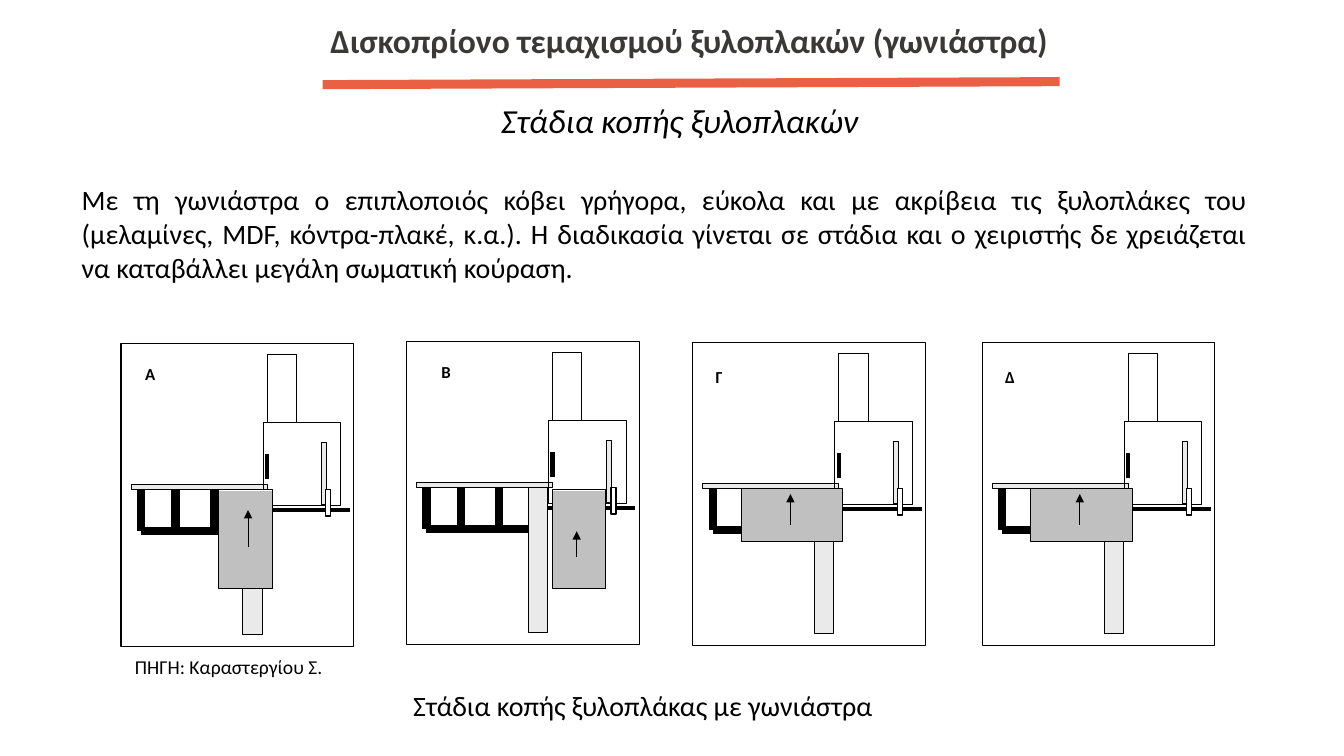
import pptx
import pptx.util
import pptx.dml.color
import pptx.enum.dml
import pptx.enum.shapes
import pptx.enum.text
import pptx.oxml
import pptx.oxml.ns
import lxml.etree

ALIGN = pptx.enum.text.PP_ALIGN
ANCHOR = pptx.enum.text.MSO_ANCHOR
PATTERN = pptx.enum.dml.MSO_PATTERN
BLACK, WHITE, PALE, GREY = "000000", "FFFFFF", "EAEAEA", "C0C0C0"


def px(n):
    """One px is a hundredth of an inch."""
    return pptx.util.Emu(n * 9144)


def color(code):
    return pptx.dml.color.RGBColor.from_string(code)


def add_xml(parent, tag):
    return lxml.etree.SubElement(parent, pptx.oxml.ns.qn(tag))


class Deck:
    font = "Calibri"

    def __init__(self):
        self.prs = pptx.Presentation()
        self.prs.slide_width, self.prs.slide_height = px(1333), px(750)
        self.s = self.prs.slides.add_slide(self.prs.slide_layouts[1])
        self.target = self.s.shapes
        self.x = self.y = 0

    def start_group(self, x, y):
        """Elements that follow go in a group, measured from x, y."""
        self.target = self.s.shapes.add_group_shape().shapes
        self.x, self.y = x, y

    def end_group(self):
        self.target = self.s.shapes
        self.x = self.y = 0

    def place(self, sp, box):
        x, y, w, h = box
        sp.left, sp.top = px(self.x + x), px(self.y + y)
        sp.width, sp.height = px(w), px(h)

    def fill_text(self, sp, text, size, code=BLACK, bold=False, italic=False,
                  align=ALIGN.LEFT, anchor=ANCHOR.TOP, wrap=True, indent=0,
                  grow=True):
        tf = sp.text_frame
        tf.word_wrap = wrap
        tf.vertical_anchor = anchor
        sizes = pptx.enum.text.MSO_AUTO_SIZE
        tf.auto_size = sizes.SHAPE_TO_FIT_TEXT if grow else sizes.NONE
        p = tf.paragraphs[0]
        p.alignment = align
        p.space_before = pptx.util.Pt(0)
        pPr = p._p.get_or_add_pPr()
        pPr.set("marL", "0")
        pPr.set("indent", str(px(indent)))
        add_xml(pPr, "a:buNone")
        r = p.add_run()
        r.text = text
        r.font.name, r.font.size = self.font, pptx.util.Pt(size)
        r.font.bold, r.font.italic = bold, italic
        r.font.color.rgb = color(code)

    def title(self, box, text, **style):
        sp = self.s.shapes.title
        self.place(sp, box)
        tf = sp.text_frame
        tf.margin_left = tf.margin_right = px(5)
        tf.margin_top = tf.margin_bottom = px(3)
        self.fill_text(sp, text, **style)

    def body(self, box, text, **style):
        sp = self.s.placeholders[1]
        self.place(sp, box)
        self.fill_text(sp, text, **style)

    def text(self, box, text, **style):
        sp = self.target.add_textbox(0, 0, 0, 0)
        self.place(sp, box)
        self.fill_text(sp, text, **style)

    def rect(self, box, fill=None, pattern=None):
        sp = self.target.add_shape(
            pptx.enum.shapes.MSO_SHAPE.RECTANGLE, 0, 0, 0, 0)
        self.place(sp, box)
        sp.shadow.inherit = False
        if pattern:
            sp.fill.patterned()
            sp.fill.pattern = pattern
            sp.fill.fore_color.rgb = color(fill)
            sp.fill.back_color.rgb = color(WHITE)
        elif fill:
            sp.fill.solid()
            sp.fill.fore_color.rgb = color(fill)
        else:
            sp.fill.background()
        sp.line.color.rgb = color(BLACK)
        sp.line.width = pptx.util.Pt(0.75)

    def line(self, x1, y1, x2, y2, width, code=BLACK, arrow=False):
        sp = self.target.add_connector(
            pptx.enum.shapes.MSO_CONNECTOR.STRAIGHT,
            px(self.x + x1), px(self.y + y1), px(self.x + x2), px(self.y + y2))
        sp.line.color.rgb = color(code)
        sp.line.width = pptx.util.Pt(width)
        if arrow:
            add_xml(sp.line._get_or_add_ln(), "a:tailEnd").set("type", "triangle")
        add_xml(sp._element.spPr, "a:effectLst")

    def stage(self, x, y, label, label_at, board, pattern, arrow):
        """One cutting stage: the machine, then the board on it."""
        self.start_group(x, y)
        self.rect((0, 0, 231, 300))
        # Sliding table and its frame
        self.rect((10, 140, 135, 5), PALE)
        self.rect((121, 145, 19, 144), PALE)
        self.line(121, 186, 20, 186, 6)
        for leg in (20, 54, 92):
            self.line(leg, 186, leg, 145, 6)
        # Saw body, blade and guides
        self.rect((141, 78, 77, 83))
        self.line(145, 109, 145, 134, 3)
        self.rect((145, 11, 29, 67))
        self.line(141, 165, 227, 165, 3)
        self.rect((199, 98, 5, 62), PALE)
        self.rect((203, 145, 5, 26), WHITE)
        # Board, feed direction and label
        self.rect(board, GREY, pattern)
        ax, start, end = arrow
        self.line(ax, start, ax, end, 0.75, arrow=True)
        self.text((*label_at, 55, 44), label, size=12, bold=True, grow=False,
                  align=ALIGN.CENTER if label == "Β" else ALIGN.LEFT)
        self.end_group()


def main():
    d = Deck()

    # Heading
    d.title((293, 17, 781, 45), "Δισκοπρίονο τεμαχισμού ξυλοπλακών (γωνιάστρα)",
            size=24, code="3B3838", bold=True, align=ALIGN.CENTER)
    d.line(320, 84, 1051, 81, 6.5, "EA6045")
    d.text((475, 94, 390, 50), "Στάδια κοπής ξυλοπλακών", size=24, italic=True,
           align=ALIGN.JUSTIFY, wrap=False, indent=12)

    # Description
    d.body((71, 176, 1176, 111),
           "Με τη γωνιάστρα ο επιπλοποιός κόβει γρήγορα, εύκολα και με ακρίβεια "
           "τις ξυλοπλάκες του (μελαμίνες, MDF, κόντρα-πλακέ, κ.α.). Η διαδικασία "
           "γίνεται σε στάδια και ο χειριστής δε χρειάζεται να καταβάλλει μεγάλη "
           "σωματική κούραση.",
           size=20, align=ALIGN.JUSTIFY, anchor=ANCHOR.MIDDLE)

    # Cutting stages: board lengthwise, then crosswise
    along, across = PATTERN.DARK_HORIZONTAL, PATTERN.DARK_VERTICAL
    wide, short_feed = (48, 145, 101, 52), (97, 181, 150)
    d.stage(120, 341, "Α", (14, 15), (97, 145, 53, 98), along, (126, 202, 165))
    d.stage(403, 339, "Β", (12, 15), (145, 147, 53, 98), along, (169, 214, 188))
    d.stage(687, 340, "Γ", (13, 19), wide, across, short_feed)
    d.stage(974, 340, "Δ", (13, 19), wide, across, short_feed)

    # Source and caption
    d.text((124, 645, 208, 34), "ΠΗΓΗ: Καραστεργίου Σ.", size=14, wrap=False)
    d.text((400, 678, 493, 44), "Στάδια κοπής ξυλοπλάκας με γωνιάστρα",
           size=20, wrap=False)

    d.prs.save("out.pptx")


if __name__ == "__main__":
    main()
